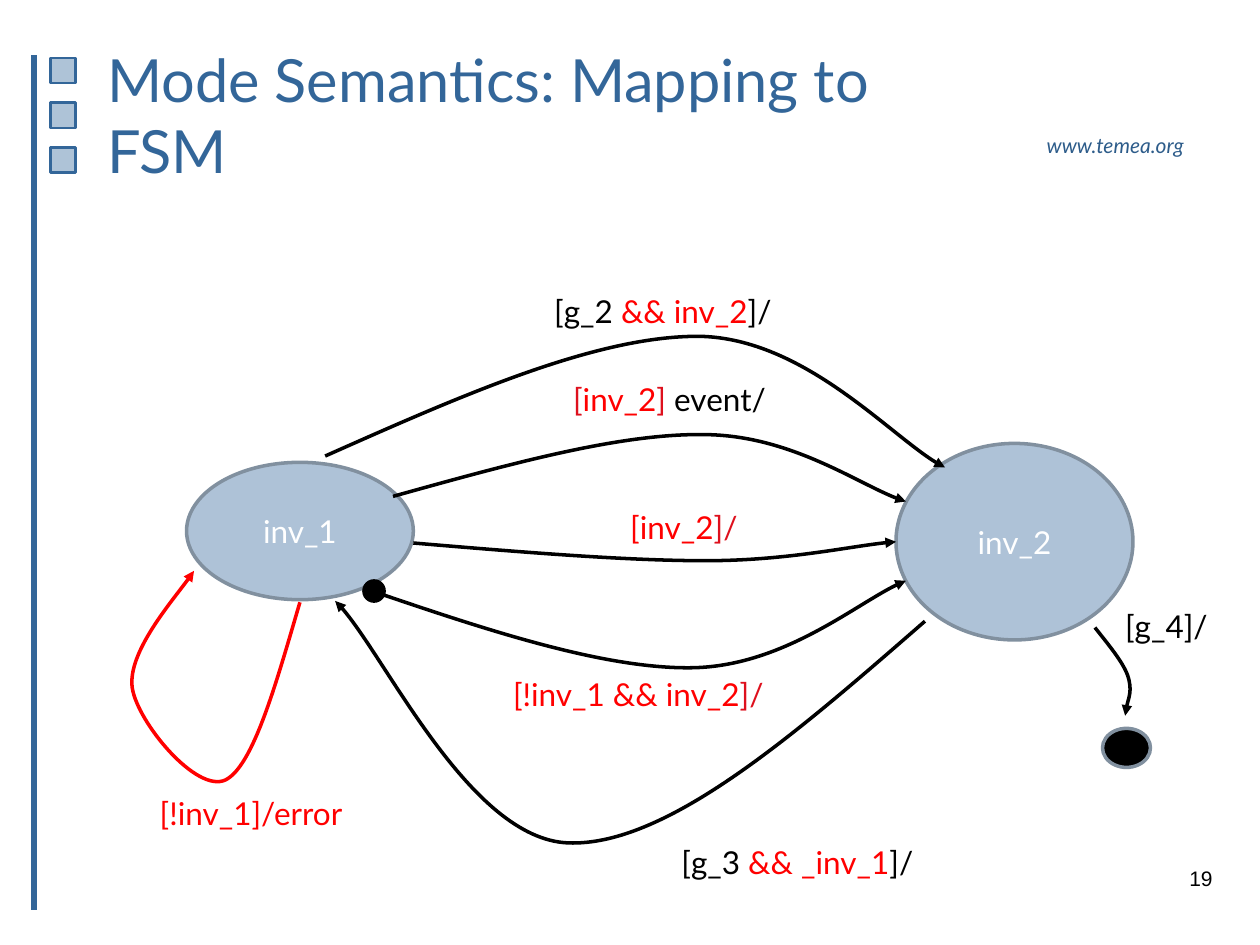
from lxml import etree
from pptx import Presentation
from pptx.dml.color import RGBColor
from pptx.enum import shapes as sh, text as tx
from pptx.oxml import ns
from pptx.util import Pt

COLORS = {
    "blue": "336699", "link": "2D5C8A", "square": "AEC3D7", "state": "AEC2D7",
    "outline": "81909F", "red": "FF0000", "crimson": "DE101D",
    "black": "000000", "white": "FFFFFF",
}
FONT = "Lato"


def rgb(name):
    return RGBColor.from_string(COLORS[name])


def style_run(r, color, size=18, font=FONT, italic=None):
    r.font.name, r.font.size, r.font.italic = font, Pt(size), italic
    r.font.color.rgb = rgb(color)


def add_text(s, box, runs, wrap=False, align=None, **style):
    """Text box whose single paragraph is made of (text, color) runs."""
    tf = s.shapes.add_textbox(*map(Pt, box)).text_frame
    tf.word_wrap = wrap
    tf.auto_size = tx.MSO_AUTO_SIZE.NONE if wrap else tx.MSO_AUTO_SIZE.SHAPE_TO_FIT_TEXT
    p = tf.paragraphs[0]
    p.alignment = align
    for content, color in runs:
        r = p.add_run()
        r.text = content
        style_run(r, color, **style)


def add_preset(s, kind, box, fill, line, width=2, label=""):
    sp = s.shapes.add_shape(kind, *map(Pt, box))
    sp.shadow.inherit = False
    sp.fill.solid()
    sp.fill.fore_color.rgb = rgb(fill)
    sp.line.color.rgb = rgb(line)
    sp.line.width = Pt(width)
    if label:
        tf = sp.text_frame
        tf.text = label
        tf.vertical_anchor = tx.MSO_ANCHOR.MIDDLE
        tf.paragraphs[0].alignment = tx.PP_ALIGN.CENTER
        style_run(tf.paragraphs[0].runs[0], "white")


def add_curve(s, points, color):
    """Arrow along Bezier segments: a start, then three points a segment."""
    pts = [(Pt(x), Pt(y)) for x, y in points]
    builder = s.shapes.build_freeform(*pts[0], scale=1.0)
    builder.add_line_segments(pts[1:], close=False)
    sp = builder.convert_to_shape()
    sp.shadow.inherit = False
    sp.fill.background()
    sp.line.color.rgb = rgb(color)
    sp.line.width = Pt(2)
    # Join each three straight segments into one cubic curve
    lines = list(sp.element.iter(ns.qn("a:lnTo")))
    for i in range(0, len(lines), 3):
        curve = etree.Element(ns.qn("a:cubicBezTo"))
        lines[i].addprevious(curve)
        for line in lines[i:i + 3]:
            curve.append(line[0])
            line.getparent().remove(line)
    ln = sp.line._get_or_add_ln()
    etree.SubElement(ln, ns.qn("a:tailEnd"), type="triangle")


def add_frame(s, box):
    """Vertical rule, three squares, web address and page number."""
    x, y, w, h = box
    rule = s.shapes.add_connector(sh.MSO_CONNECTOR.STRAIGHT, Pt(x), Pt(y), Pt(x), Pt(y + h))
    rule.line.color.rgb = rgb("blue")
    rule.line.width = Pt(3)
    etree.SubElement(rule.element.spPr, ns.qn("a:effectLst"))
    for i in range(3):
        add_preset(s, sh.MSO_SHAPE.RECTANGLE, (x + 9.4, y + 1.4 + i * 25.6, 14.4, 14.4),
                   "square", "blue", 1.5)
    add_text(s, (x + w - 109, y + 40.3, 112.3, 21.6), [("www.temea.org", "link")],
             wrap=True, size=12, italic=True)
    add_text(s, (x + w - 168, y + h - 28.8, 168, 28), [("19", "black")],
             wrap=True, align=tx.PP_ALIGN.RIGHT, size=12, font="Arial")


def add_title(s, box, title):
    sp = s.shapes.title
    sp.left, sp.top, sp.width, sp.height = map(Pt, box)
    tf = sp.text_frame
    tf.text = title
    tf.vertical_anchor = tx.MSO_ANCHOR.MIDDLE
    tf.paragraphs[0].alignment = tx.PP_ALIGN.LEFT
    style_run(tf.paragraphs[0].runs[0], "blue", 34)


STATES = [  # box, fill, outline, label
    ((34.6, 102.2, 129.6, 78.5), "state", "outline", "inv_1"),
    ((440, 91.4, 135.4, 112.3), "state", "outline", "inv_2"),
    ((136, 170, 11.5, 11.5), "black", "black", ""),
    ((558, 254.2, 27.4, 22.3), "black", "outline", ""),
]
TRANSITIONS = [  # color, curve points, label corner and width, label runs
    ("black", [(113.8, 98.6), (191.5, 64.1), (269.3, 29.5), (328.3, 30.2),
               (387.4, 31.7), (441.4, 92.2), (468, 105.1)],
     (237.6, 1.4, 144.7), [("[g_2 ", "black"), ("&& inv_2", "red"), ("]/", "black")]),
    ("black", [(152.6, 121.7), (217.4, 103.7), (281.5, 85.7), (329.8, 86.4),
               (378.7, 86.4), (423.4, 118.1), (445.7, 124.6)],
     (248.4, 51.8, 128.2),
     [("[", "crimson"), ("inv_2", "red"), ("] ", "crimson"), ("event/", "black")]),
    ("black", [(164.2, 148.3), (224.6, 153.4), (285.1, 158.4), (331.2, 158.4),
               (377.3, 158.4), (419, 149), (440, 147.6)],
     (276.5, 124.6, 84.2), [(" [inv_2", "red"), ("]/", "crimson")]),
    ("black", [(136.1, 174.2), (203.8, 197.3), (272.2, 220.3), (323.3, 219.6),
               (375.1, 218.9), (422.6, 178.6), (445.7, 169.9)],
     (209.5, 220.3, 175), [(" [!inv_1 && inv_2", "red"), ("]/", "crimson")]),
    ("black", [(456.5, 193), (383, 257), (308.9, 321.8), (252.7, 319.7),
               (196.6, 317.5), (144.7, 205.2), (119.5, 181.4)],
     (310.3, 316.1, 154.1), [("[g_3 ", "black"), ("&& _inv_1", "red"), ("]/", "black")]),
    ("red", [(99.4, 182.2), (85.7, 229), (72.7, 275.8), (56.9, 283.7),
             (40.3, 291.6), (6.5, 250.6), (3.6, 231.1),
             (0.7, 211), (33.1, 173.5), (38.9, 164.2)],
     (12.2, 288, 123.8), [("[!inv_1]/error", "red")]),
    ("black", [(553.7, 196.6), (561.6, 206.6), (569.5, 216), (572.4, 223.9),
               (575.3, 232.6), (571, 242.6), (571, 247)],
     (563.8, 181.4, 65.5), [("[g_4]/", "black")]),
]


def add_state_machine(s, box):
    x, y = box[:2]
    for (left, top, w, h), fill, line, label in STATES:
        add_preset(s, sh.MSO_SHAPE.OVAL, (x + left, y + top, w, h), fill, line, label=label)
    for color, points, (left, top, w), runs in TRANSITIONS:
        add_curve(s, [(x + px, y + py) for px, py in points], color)
        add_text(s, (x + left, y + top, w, 28.8), runs)


def main():
    prs = Presentation()
    prs.slide_width, prs.slide_height = Pt(720), Pt(540)
    s = prs.slides.add_slide(prs.slide_layouts[5])
    add_frame(s, (19.4, 31.7, 680.6, 488.2))
    add_title(s, (54, 20.2, 527, 90), "Mode Semantics: Mapping to FSM")
    add_state_machine(s, (72, 162, 630, 346))
    prs.save("out.pptx")


if __name__ == "__main__":
    main()
